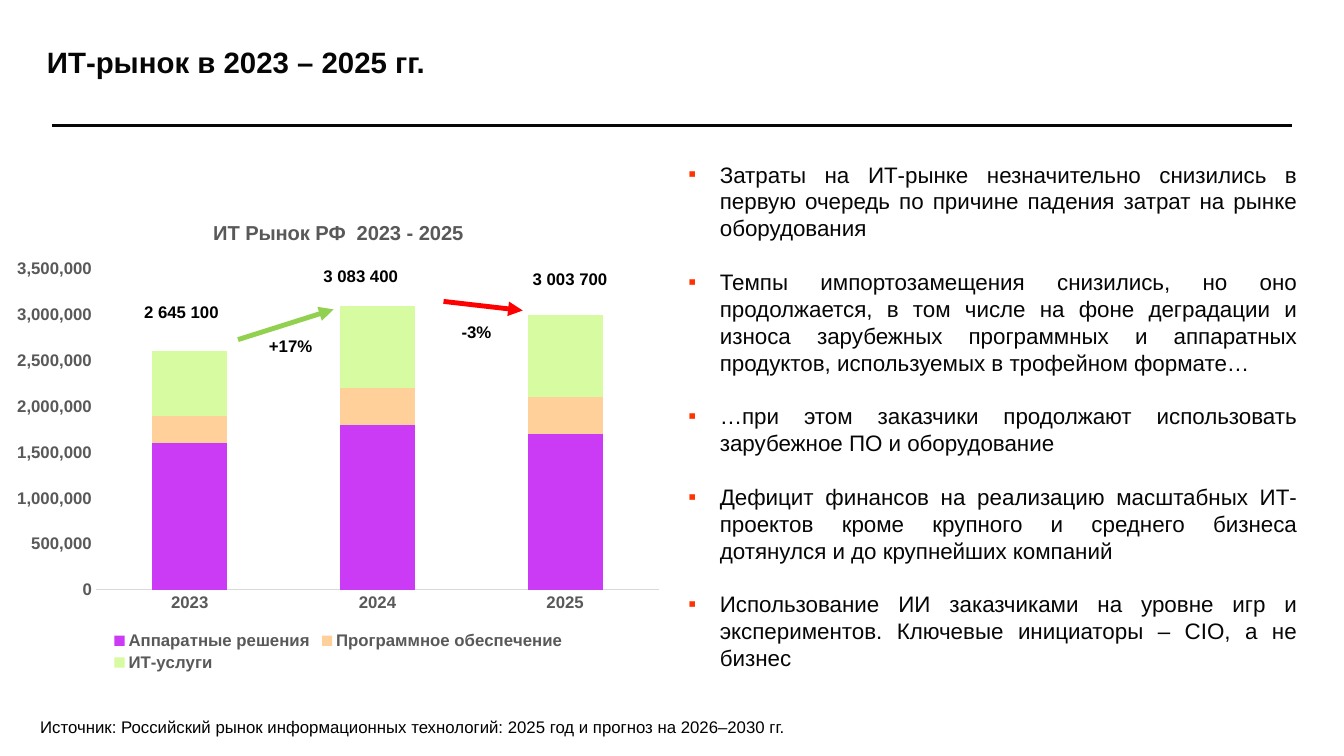
"""Build the slide about the Russian IT market in 2023 – 2025."""
from typing import NamedTuple

from lxml.etree import SubElement
from pptx import Presentation
from pptx.chart.data import CategoryChartData
from pptx.dml.color import RGBColor
from pptx.enum.chart import XL_CHART_TYPE as Chart, XL_LEGEND_POSITION as LegendPos, XL_TICK_MARK as Tick
from pptx.enum.shapes import MSO_CONNECTOR as Conn
from pptx.enum.text import PP_ALIGN as Align
from pptx.oxml.ns import qn
from pptx.util import Pt

FONT = "Arial"
INK, BLACK, GREY = "060606", "000000", "595959"
CHART_W, CHART_H = 477.4, 338.4


class Label(NamedTuple):
    text: str
    x: float
    y: float
    w: float = 90
    h: float = 21.6
    size: float = 12
    bold: bool = True
    color: str = BLACK
    inset: tuple = (7.2, 3.6)


class Line(NamedTuple):
    x1: float
    y1: float
    x2: float
    y2: float
    color: str
    width: float
    arrow: bool = True


class Series(NamedTuple):
    name: str
    values: tuple
    color: str


LABELS = [
    Label("ИТ-рынок в 2023 – 2025 гг.", 33.6, 31.7, 864, 25.2, 21, color=INK, inset=(0, 0)),
    Label("2 645 100", 95.8, 211.9),
    Label("3 083 400", 223.9, 186),
    Label("3 003 700", 373.4, 188.6),
    Label("+17%", 185, 236.2, 61.2),
    Label("-3%", 322.6, 226.1, 61.2),
    Label("Источник: Российский рынок информационных технологий: 2025 год и прогноз на 2026–2030 гг.",
          21.6, 508.3, 802, bold=False),
]
LINES = [
    Line(37.4, 89.6, 922.8, 89.6, INK, 1.75, False),
    Line(170, 242.6, 238.3, 221, "92D050", 3.5),
    Line(316.8, 215.3, 373.4, 221.8, "FF0000", 3.5),
]
YEARS = ("2023", "2024", "2025")
SERIES = [
    Series("Аппаратные решения", (1600000, 1800000, 1700000), "CB3BF6"),
    Series("Программное обеспечение", (300000, 400000, 400000), "FFD099"),
    Series("ИТ-услуги", (700000, 900000, 900000), "D7FBA1"),
]
BULLETS = [
    "Затраты на ИТ-рынке незначительно снизились в первую очередь по причине падения затрат "
    "на рынке оборудования",
    "Темпы импортозамещения снизились, но оно продолжается, в том числе на фоне деградации и износа "
    "зарубежных программных и аппаратных продуктов, используемых в трофейном формате…",
    "…при этом заказчики продолжают использовать зарубежное ПО и оборудование",
    "Дефицит финансов на реализацию масштабных ИТ-проектов кроме крупного и среднего бизнеса "
    "дотянулся и до крупнейших компаний",
    "Использование ИИ заказчиками на уровне игр и экспериментов. Ключевые инициаторы – CIO, а не бизнес",
]


def rgb(value: str) -> RGBColor:
    return RGBColor.from_string(value)


def style(font, size: float, color: str, bold: bool) -> None:
    font.name, font.size, font.bold = FONT, Pt(size), bold
    font.color.rgb = rgb(color)


def add_run(p, text: str, size: float, color: str, bold: bool) -> None:
    r = p.add_run()
    r.text = text
    style(r.font, size, color, bold)


def add_frame(s, x: float, y: float, w: float, h: float, inset: tuple):
    tf = s.shapes.add_textbox(Pt(x), Pt(y), Pt(w), Pt(h)).text_frame
    tf.word_wrap = True
    tf.margin_left = tf.margin_right = Pt(inset[0])
    tf.margin_top = tf.margin_bottom = Pt(inset[1])
    return tf


def add_label(s, lb: Label) -> None:
    tf = add_frame(s, lb.x, lb.y, lb.w, lb.h, lb.inset)
    add_run(tf.paragraphs[0], lb.text, lb.size, lb.color, lb.bold)


def add_line(s, ln: Line) -> None:
    c = s.shapes.add_connector(Conn.STRAIGHT, Pt(ln.x1), Pt(ln.y1), Pt(ln.x2), Pt(ln.y2))
    c.line.color.rgb = rgb(ln.color)
    c.line.width = Pt(ln.width)
    sp_pr = c.element.spPr
    if ln.arrow:
        SubElement(sp_pr.find(qn("a:ln")), qn("a:tailEnd"), type="triangle")
    SubElement(sp_pr, qn("a:effectLst"))


def add_bullets(s, items: list[str]) -> None:
    tf = add_frame(s, 491.8, 114.8, 434.9, 368, (0, 0))
    for i, text in enumerate(items):
        p = tf.add_paragraph() if i else tf.paragraphs[0]
        pr = p._p.get_or_add_pPr()
        pr.set("marL", str(Pt(22.4)))
        pr.set("indent", str(Pt(-22.4)))
        SubElement(SubElement(pr, qn("a:buClr")), qn("a:srgbClr"), val="FF3300")
        SubElement(pr, qn("a:buFont"), typeface=FONT)
        SubElement(pr, qn("a:buChar"), char="▪")
        p.alignment = Align.JUSTIFY
        p.line_spacing = Pt(19.2)
        p.space_before = Pt(19.2 if i else 0)
        add_run(p, text, 16, INK, False)


def place(part, x: float, y: float, w: float, h: float, inner: bool = False) -> None:
    layout = part.find(qn("c:layout"))
    if layout is None:
        layout = SubElement(part, qn("c:layout"))
        part.remove(layout)
        anchor = part.find(qn("c:legendPos"))
        part.insert(0 if anchor is None else part.index(anchor) + 1, layout)
    for child in list(layout):
        layout.remove(child)
    manual = SubElement(layout, qn("c:manualLayout"))
    if inner:
        SubElement(manual, qn("c:layoutTarget"), val="inner")
    for tag in ("xMode", "yMode"):
        SubElement(manual, qn(f"c:{tag}"), val="edge")
    shares = (x / CHART_W, y / CHART_H, w / CHART_W, h / CHART_H)
    for tag, share in zip("xywh", shares):
        SubElement(manual, qn(f"c:{tag}"), val=str(share))


def add_market_chart(s) -> None:
    data = CategoryChartData(number_format="#,##0")
    data.categories = YEARS
    for item in SERIES:
        data.add_series(item.name, item.values)
    ch = s.shapes.add_chart(Chart.COLUMN_STACKED, Pt(2.9), Pt(144), Pt(CHART_W), Pt(CHART_H), data).chart
    style(ch.font, 12, GREY, True)
    ch.has_title = True
    add_run(ch.chart_title.text_frame.paragraphs[0], "ИТ Рынок РФ  2023 - 2025", 14.4, GREY, True)
    ch.has_legend = True
    ch.legend.position = LegendPos.BOTTOM
    ch.legend.include_in_layout = False
    style(ch.legend.font, 12, GREY, True)
    plot = ch.plots[0]
    plot.gap_width, plot.overlap, plot.vary_by_categories = 150, 100, False
    for series, item in zip(plot.series, SERIES):
        series.format.fill.solid()
        series.format.fill.fore_color.rgb = rgb(item.color)
    for axis in (ch.category_axis, ch.value_axis):
        axis.major_tick_mark = axis.minor_tick_mark = Tick.NONE
        axis.has_major_gridlines = False
        style(axis.tick_labels.font, 12, GREY, True)
    ch.category_axis.format.line.color.rgb = rgb("D9D9D9")
    ch.category_axis.format.line.width = Pt(0.75)
    va = ch.value_axis
    va.format.line.fill.background()
    va.minimum_scale, va.maximum_scale, va.major_unit = 0, 3500000, 500000
    va.tick_labels.number_format = "#,##0"
    va.tick_labels.number_format_is_linked = False
    place(ch.element.find(".//" + qn("c:plotArea")), 65.6, 48.1, 402.3, 229.4, True)
    place(ch.element.find(".//" + qn("c:legend")), 74.2, 304.6, 329.4, 33.8)


def main() -> None:
    prs = Presentation()
    prs.slide_width, prs.slide_height = Pt(960), Pt(540)
    s = prs.slides.add_slide(prs.slide_layouts[6])
    add_market_chart(s)
    add_bullets(s, BULLETS)
    for ln in LINES:
        add_line(s, ln)
    for lb in LABELS:
        add_label(s, lb)
    prs.save("out.pptx")


if __name__ == "__main__":
    main()
